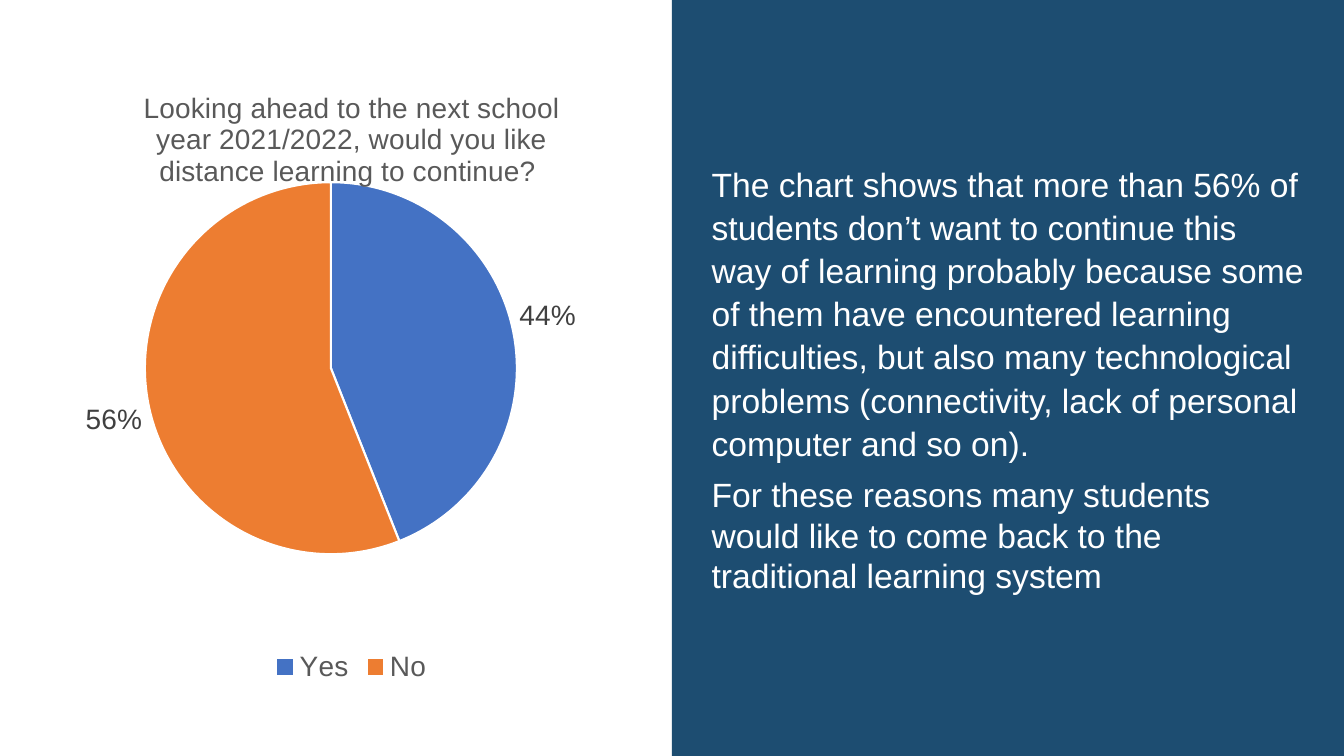
from typing import NamedTuple

from lxml.etree import SubElement
from pptx import Presentation
from pptx.chart.chart import Chart
from pptx.chart.data import CategoryChartData
from pptx.dml.color import RGBColor
from pptx.enum.chart import XL_CHART_TYPE, XL_LABEL_POSITION, XL_LEGEND_POSITION
from pptx.enum.shapes import MSO_SHAPE
from pptx.enum.text import MSO_ANCHOR, PP_ALIGN
from pptx.oxml.ns import qn
from pptx.slide import Slide
from pptx.text.text import Font
from pptx.util import Cm, Pt

WHITE = RGBColor(0xFF, 0xFF, 0xFF)
NAVY = RGBColor(0x1D, 0x4D, 0x71)
BLUE = RGBColor(0x44, 0x72, 0xC4)
ORANGE = RGBColor(0xED, 0x7D, 0x31)
GREY = RGBColor(0x59, 0x59, 0x59)
DARK = RGBColor(0x40, 0x40, 0x40)

WIDTH, HEIGHT = Cm(33.87), Cm(19.05)
HALF = WIDTH // 2


class Slice(NamedTuple):
    name: str
    share: int
    color: RGBColor


class Note(NamedTuple):
    text: str
    line: float
    after: int


SLICES = [Slice("Yes", 44, BLUE), Slice("No", 56, ORANGE)]
TITLE = ("Looking ahead to the next school year 2021/2022, "
         "would you like distance learning to continue? ")
NOTES = [
    Note("The chart shows that more than 56% of students don’t want to "
         "continue this way of learning probably because some of them have "
         "encountered learning difficulties, but also many technological "
         "problems (connectivity, lack of personal computer and so on).",
         1.07, 8),
    Note("For these reasons many students would like to come back to the "
         "traditional learning system", 1.0, 0),
]


def style(font: Font, size: int, color: RGBColor) -> None:
    font.name = "Arial"
    font.size = Pt(size)
    font.bold = False
    font.color.rgb = color


def place_plot(chart: Chart) -> None:
    """Fix the inner plot area as fractions of the chart frame."""
    area = chart.plots[0]._element.getparent()
    layout = area.find(qn("c:layout"))
    if layout is None:
        layout = area.makeelement(qn("c:layout"))
        area.insert(0, layout)
    manual = SubElement(layout, qn("c:manualLayout"))
    rules = {"layoutTarget": "inner", "xMode": "edge", "yMode": "edge",
             "x": "0.15", "y": "0.18", "w": "0.63", "h": "0.61"}
    for tag, val in rules.items():
        SubElement(manual, qn(f"c:{tag}")).set("val", val)


def add_pie(slide: Slide) -> None:
    data = CategoryChartData()
    data.categories = [part.name for part in SLICES]
    data.add_series("Series 1", [part.share for part in SLICES])
    chart = slide.shapes.add_chart(
        XL_CHART_TYPE.PIE, Cm(1.42), Cm(1.68), Cm(14.88), Cm(15.67), data).chart
    style(chart.font, 10, GREY)

    chart.has_title = True
    title = chart.chart_title.text_frame.paragraphs[0]
    title.text = TITLE
    style(title.font, 20, GREY)

    chart.has_legend = True
    chart.legend.position = XL_LEGEND_POSITION.BOTTOM
    chart.legend.include_in_layout = False
    style(chart.legend.font, 20, GREY)

    plot = chart.plots[0]
    plot.vary_by_categories = True
    series = plot.series[0]
    for i, part in enumerate(SLICES):
        look = series.points[i].format
        look.fill.solid()
        look.fill.fore_color.rgb = part.color
        look.line.color.rgb = WHITE
        look.line.width = Pt(1.5)

    labels = series.data_labels
    labels.show_value = False
    labels.show_percentage = True
    labels.number_format = "0%"
    labels.number_format_is_linked = False
    labels.position = XL_LABEL_POSITION.OUTSIDE_END
    style(labels.font, 20, DARK)
    place_plot(chart)


def add_panel(slide: Slide) -> None:
    panel = slide.shapes.add_shape(
        MSO_SHAPE.RECTANGLE, HALF, 0, WIDTH - HALF, HEIGHT)
    panel.shadow.inherit = False
    panel.fill.solid()
    panel.fill.fore_color.rgb = NAVY
    panel.line.fill.background()

    frame = panel.text_frame
    frame.word_wrap = True
    frame.vertical_anchor = MSO_ANCHOR.MIDDLE
    frame.margin_left = frame.margin_right = Cm(1)
    frame.margin_top = frame.margin_bottom = Cm(0.13)
    for i, note in enumerate(NOTES):
        para = frame.add_paragraph() if i else frame.paragraphs[0]
        para.text = note.text
        para.alignment = PP_ALIGN.LEFT
        para.line_spacing = note.line
        para.space_after = Pt(note.after)
        style(para.font, 24, WHITE)


def main() -> None:
    deck = Presentation()
    deck.slide_width, deck.slide_height = WIDTH, HEIGHT
    slide = deck.slides.add_slide(deck.slide_layouts[6])
    add_panel(slide)
    add_pie(slide)
    deck.save("out.pptx")


if __name__ == "__main__":
    main()
